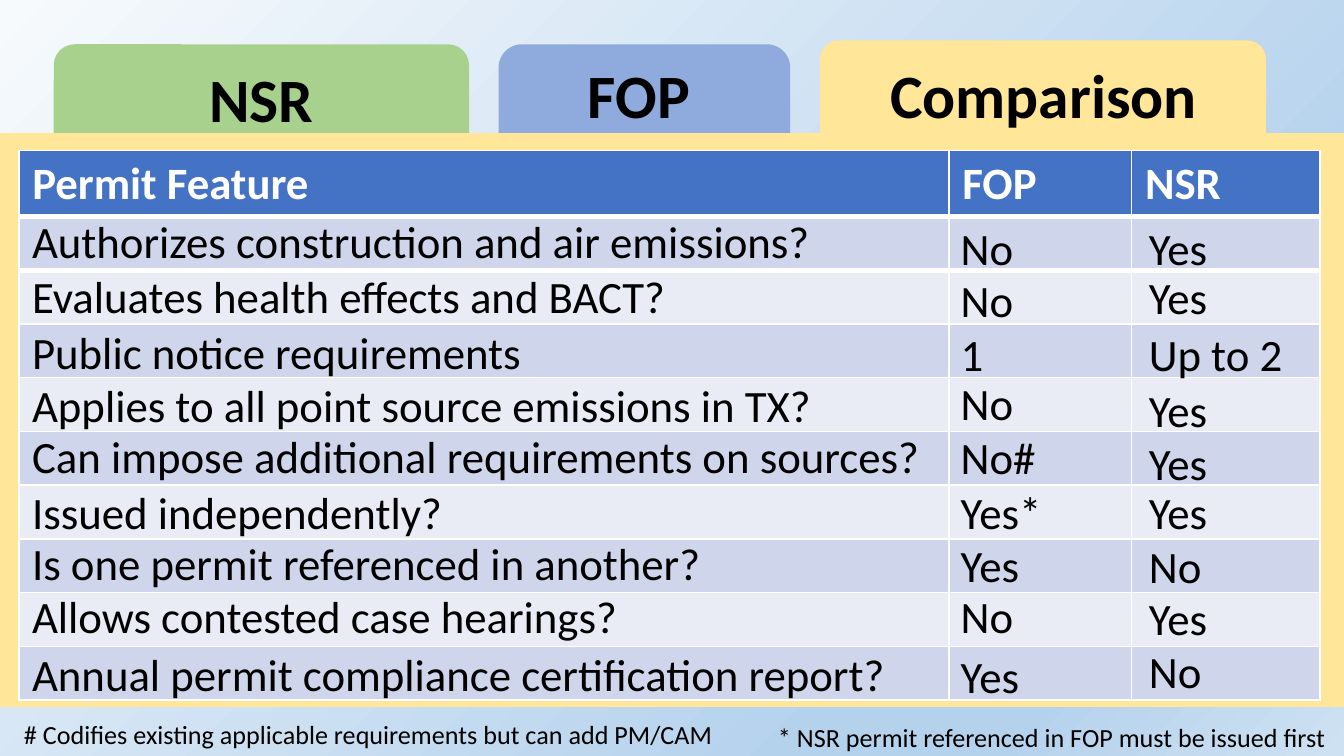
from dataclasses import dataclass
from lxml.etree import Element, SubElement
from pptx import Presentation
from pptx.dml.color import RGBColor
from pptx.enum.shapes import MSO_SHAPE
from pptx.enum.text import MSO_ANCHOR, MSO_AUTO_SIZE, PP_ALIGN
from pptx.oxml.ns import qn
from pptx.util import Inches, Pt


@dataclass(frozen=True)
class Theme:
    font: str = "Calibri"
    black: str = "000000"
    white: str = "FFFFFF"
    green: str = "A9D18E"
    blue: str = "8FAADC"
    gold: str = "FFE699"
    head: str = "4472C4"
    bands: tuple = ("CFD5EA", "E9EBF5")
    sky: tuple = ((0, "F7FAFD"), (74, "B5D2EC"), (83, "B5D2EC"), (100, "CEE1F2"))
    tab: int = 33
    body: int = 24
    note: int = 14


THEME = Theme()
HEADS = ("Permit Feature", "FOP", "NSR")
WIDTHS = (6.92, 1.36, 1.4)
LEFTS = (0, 6.91, 8.31)
ROWS = (
    (("Authorizes construction and air emissions?", 0.42), ("No", 0.47), ("Yes", 0.47)),
    (("Evaluates health effects and BACT?", 0.83), ("No", 0.86), ("Yes", 0.84)),
    (("Public notice requirements", 1.25), ("1", 1.26), ("Up to 2", 1.26)),
    (("Applies to all point source emissions in TX?", 1.64), ("No", 1.63), ("Yes", 1.68)),
    (("Can impose additional requirements on sources?", 2.02), ("No#", 2.03), ("Yes", 2.07)),
    (("Issued independently?", 2.44), ("Yes*", 2.44), ("Yes", 2.44)),
    (("Is one permit referenced in another?", 2.82), ("Yes", 2.83), ("No", 2.84)),
    (("Allows contested case hearings?", 3.21), ("No", 3.21), ("Yes", 3.23)),
    (("Annual permit compliance certification report?", 3.64), ("Yes", 3.66), ("No", 3.62)),
)


def style(frame, size, color=THEME.black, bold=False):
    for run in frame.paragraphs[0].runs:
        run.font.name = THEME.font
        run.font.size = Pt(size)
        run.font.bold = bold
        run.font.color.rgb = RGBColor.from_string(color)


def block(slide, kind, box, color):
    shape = slide.shapes.add_shape(kind, *map(Inches, box))
    shape.shadow.inherit = False
    shape.fill.solid()
    shape.fill.fore_color.rgb = RGBColor.from_string(color)
    shape.line.fill.background()


def label(slide, text, box, size):
    shape = slide.shapes.add_textbox(*map(Inches, box))
    frame = shape.text_frame
    frame.word_wrap = True
    frame.text = text
    style(frame, size)
    return frame


def center(frame):
    frame.margin_left = frame.margin_right = Inches(0.07)
    frame.margin_top = frame.margin_bottom = Inches(0.04)
    frame.paragraphs[0].alignment = PP_ALIGN.CENTER
    style(frame, THEME.tab, bold=True)


def edge(cell, side, width):
    line = Element(qn(side), w=str(Pt(width)))
    fill = SubElement(line, qn("a:solidFill"))
    SubElement(fill, qn("a:srgbClr"), val=THEME.white)
    cell.fill.solid()
    cell.fill.fore_color.rgb
    return line


def add_sky(slide):
    fill = slide.background.fill
    fill.gradient()
    fill.gradient_angle = 315
    stops = next(slide.element.iter(qn("a:gsLst")))
    for stop in list(stops):
        stops.remove(stop)
    for place, color in THEME.sky:
        stop = SubElement(stops, qn("a:gs"), pos=str(place * 1000))
        SubElement(stop, qn("a:srgbClr"), val=color)


def add_tabs(slide, box):
    left, top, width, height = box
    for x, y, w, h, color in (
        (0.4, 0.03, 3.09, 0.93, THEME.green),
        (3.71, 0.03, 2.17, 1.04, THEME.blue),
        (6.1, 0, 3.32, 0.85, THEME.gold),
    ):
        block(slide, MSO_SHAPE.ROUNDED_RECTANGLE, (left + x, top + y, w, h), color)
    for text, x, w in (("FOP", 3.71, 2.09), ("Comparison", 6.22, 3.09)):
        center(label(slide, text, (left + x, top + 0.08, w, 0.63), THEME.tab))
    block(slide, MSO_SHAPE.RECTANGLE, (left, top + 0.69, width, height - 0.69), THEME.gold)


def add_title(slide, box):
    title = slide.shapes.title
    title.left, title.top, title.width, title.height = map(Inches, box)
    frame = title.text_frame
    frame.text = "NSR"
    frame.auto_size = MSO_AUTO_SIZE.NONE
    frame.vertical_anchor = MSO_ANCHOR.MIDDLE
    frame.paragraphs[0].line_spacing = 0.9
    center(frame)
    slide.shapes.element.append(title.element)


def add_grid(slide, box):
    left, top = box[:2]
    table = slide.shapes.add_table(len(ROWS) + 1, len(HEADS), *map(Inches, box)).table
    for col, width in zip(table.columns, WIDTHS):
        col.width = Inches(width)
    for r, row in enumerate(table.rows):
        row.height = Inches(0.4 if r else 0.49)
        for c, cell in enumerate(row.cells):
            cell.margin_bottom = 0
            cell.fill.solid()
            color = THEME.bands[(r - 1) % 2] if r else THEME.head
            cell.fill.fore_color.rgb = RGBColor.from_string(color)
            if r < 2:
                side = "a:lnT" if r else "a:lnB"
                cell._tc.tcPr.insert(0, edge(cell, side, 3))
            if r == 0:
                cell.text_frame.text = HEADS[c]
                style(cell.text_frame, THEME.body, THEME.white, True)
    for row in ROWS:
        for (text, y), x, w in zip(row, LEFTS, (6.91, 1.36, 1.36)):
            label(slide, text, (left + x, top + y, w, 0.5), THEME.body)


def add_notes(slide, box):
    left, top, width, height = box
    first = "# Codifies existing applicable requirements but can add PM/CAM"
    label(slide, first, (left, top, 5.5, height), THEME.note)
    second = "* NSR permit referenced in FOP must be issued first"
    label(slide, second, (left + 5.61, top + 0.02, width - 5.61, height), THEME.note)


def main():
    deck = Presentation()
    deck.slide_width = Inches(10)
    deck.slide_height = deck.slide_width * 9 // 16
    slide = deck.slides.add_slide(deck.slide_layouts[5])
    add_sky(slide)
    add_tabs(slide, (0, 0.3, 10, 4.96))
    add_grid(slide, (0.14, 1.12, 9.68, 4.09))
    add_notes(slide, (0.08, 5.3, 9.92, 0.3))
    add_title(slide, (0.59, 0.4, 2.71, 0.72))
    deck.save("out.pptx")


if __name__ == "__main__":
    main()
